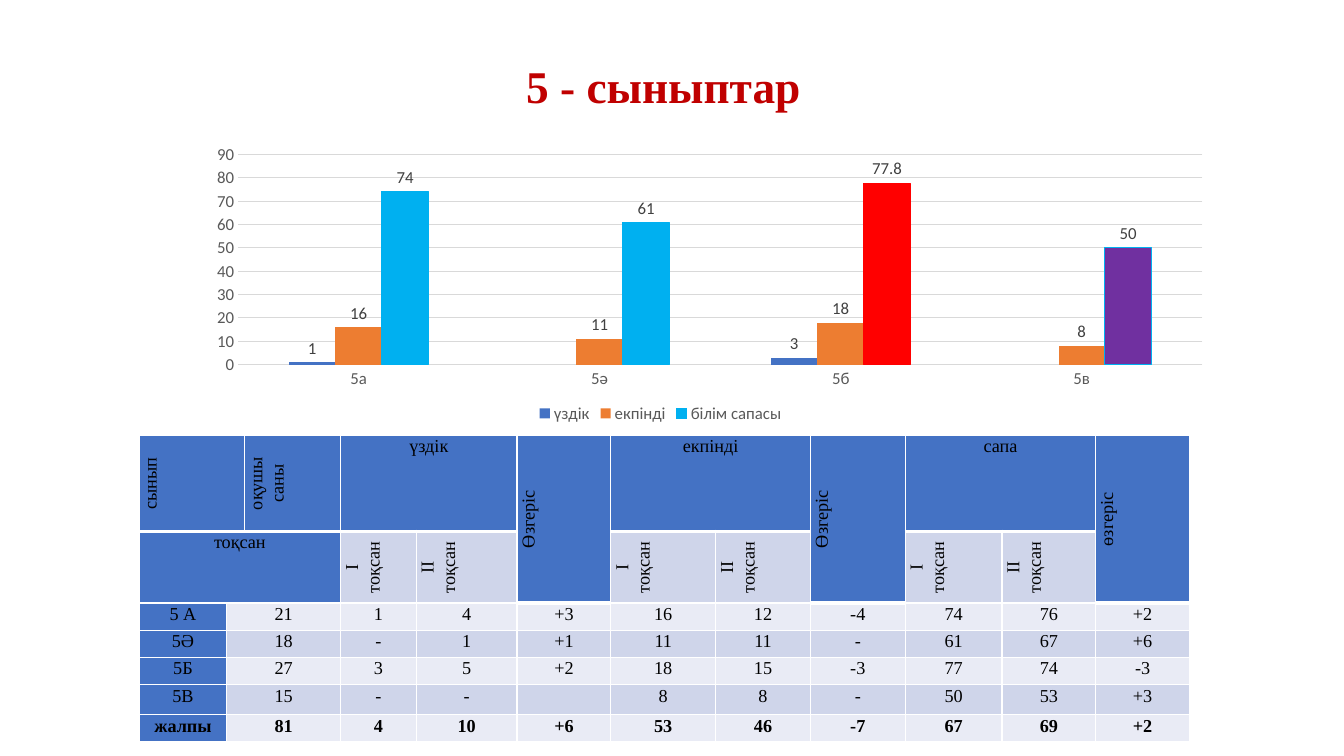
from lxml import etree
from pptx import Presentation
from pptx import util as u
from pptx.chart import data as chart_data
from pptx.dml.color import RGBColor
from pptx.enum import chart as ch, text
from pptx.oxml import parse_xml
from pptx.oxml import ns

PX = 9144  # 100 px to the inch
THEME = {
    "serif": "Times New Roman", "sans": "Calibri",
    "title_size": 32.4, "table_size": 13, "chart_size": 12,
    "title": "C00000", "ink": "000000", "white": "FFFFFF",
    "header": "4472C4", "band_light": "E9EBF5", "band_dark": "CFD5EA",
    "axis_text": "595959", "label_text": "404040", "grid": "D9D9D9",
    "excellent": "4472C4", "good": "ED7D31", "quality": "00B0F0",
    "best": "FF0000", "lowest": "7030A0",
}


def px(*lengths):
    return [u.Emu(length * PX) for length in lengths]


def set_font(font, face, size, color, bold=False):
    values = {"name": THEME[face], "size": u.Pt(THEME[size]), "bold": bold}
    for name, value in values.items():
        setattr(font, name, value)
    font.color.rgb = RGBColor.from_string(THEME[color])


deck = Presentation()
deck.slide_width, deck.slide_height = px(1333, 750)
page = deck.slides.add_slide(deck.slide_layouts[6])

# Title
box = page.shapes.add_textbox(*px(83, 23, 1150, 72))
frame_format = {"word_wrap": True, "vertical_anchor": text.MSO_ANCHOR.TOP,
                "margin_top": px(41)[0], "margin_bottom": 0}
for name, value in frame_format.items():
    setattr(box.text_frame, name, value)
para = box.text_frame.paragraphs[0]
para.alignment, para.line_spacing = text.PP_ALIGN.CENTER, 0.9
span = para.add_run()
span.text = "5 - сыныптар"
set_font(span.font, "serif", "title_size", "title", True)

# Table: None stands for a cell covered by a merge
TERMS = ["І тоқсан", "ІІ тоқсан", None]
ROWS = [
    ["сынып", None, "оқушы саны", "үздік", None, "Өзгеріс",
     "екпінді", None, "Өзгеріс", "сапа", None, "өзгеріс"],
    ["тоқсан", None, None] + TERMS * 3,
    ["5 А", "21", None, "1", "4", "+3", "16", "12", "-4", "74", "76", "+2"],
    ["5Ә", "18", None, "-", "1", "+1", "11", "11", "-", "61", "67", "+6"],
    ["5Б", "27", None, "3", "5", "+2", "18", "15", "-3", "77", "74", "-3"],
    ["5В", "15", None, "-", "-", "", "8", "8", "-", "50", "53", "+3"],
    ["жалпы", "81", None, "4", "10", "+6", "53", "46", "-7", "67", "69", "+2"],
]
WIDTHS = [87, 13, 95, 75, 100, 93, 104, 94, 94, 96, 93, 93]
HEIGHTS = [95, 71] + [27] * 5
CHANGE_COLUMNS = (5, 8, 11)
SIDEWAYS = {"сынып", "оқушы саны", "Өзгеріс", "өзгеріс", *TERMS[:2]}

table = page.shapes.add_table(
    len(ROWS), len(WIDTHS), *px(138, 432, sum(WIDTHS), sum(HEIGHTS))).table
for column, width in zip(table.columns, px(*WIDTHS)):
    column.width = width
for row, height in zip(table.rows, px(*HEIGHTS)):
    row.height = height

merges = [((0, 0), (0, 1)), ((1, 0), (1, 2))]
merges += [((0, c), (1, c)) for c in CHANGE_COLUMNS]
merges += [((0, c - 2), (0, c - 1)) for c in CHANGE_COLUMNS]
merges += [((r, 1), (r, 2)) for r in range(2, len(ROWS))]
for first, last in merges:
    table.cell(*first).merge(table.cell(*last))

cell_format = {"margin_left": px(7)[0], "margin_right": px(7)[0],
               "margin_top": 0, "margin_bottom": 0}
para_format = {"alignment": text.PP_ALIGN.CENTER, "line_spacing": 1.07,
               "space_after": u.Pt(8)}
for r, words in enumerate(ROWS):
    for c, word in enumerate(words):
        cell = table.cell(r, c)
        for name, value in cell_format.items():
            setattr(cell, name, value)
        properties = cell._tc.get_or_add_tcPr()

        # White borders, heavier below the header
        heavy = {(0, "B"), (1, "T")}
        if c in CHANGE_COLUMNS:
            heavy = {(0, "B"), (1, "B")}
        for side in "LRTB":
            weight = u.Pt(3 if (r, side) in heavy else 1)
            line = etree.SubElement(properties, ns.qn("a:ln" + side), w=str(weight))
            fill = etree.SubElement(line, ns.qn("a:solidFill"))
            etree.SubElement(fill, ns.qn("a:srgbClr"), val=THEME["white"])

        color = "band_dark" if r % 2 else "band_light"
        if r == 0 or c == 0 or (r == 1 and c in CHANGE_COLUMNS):
            color = "header"
        cell.fill.solid()
        cell.fill.fore_color.rgb = RGBColor.from_string(THEME[color])
        if word in SIDEWAYS:
            properties.set("vert", "vert270")

        para = cell.text_frame.paragraphs[0]
        for name, value in para_format.items():
            setattr(para, name, value)
        span = para.add_run()
        span.text = word or ""
        set_font(span.font, "serif", "table_size", "ink", r == len(ROWS) - 1)

# Chart
SERIES = [
    ("үздік", "excellent", [1, None, 3, None]),
    ("екпінді", "good", [16, 11, 18, 8]),
    ("білім сапасы", "quality", [74, 61, 77.8, 50]),
]
figures = chart_data.CategoryChartData()
figures.categories = ["5а", "5ә", "5б", "5в"]
for name, color, values in SERIES:
    figures.add_series(name, values)
chart = page.shapes.add_chart(
    ch.XL_CHART_TYPE.COLUMN_CLUSTERED, *px(118, 113, 1075, 311), figures).chart
set_font(chart.font, "sans", "chart_size", "axis_text")
chart.has_title = False
chart.has_legend = True
chart.legend.position = ch.XL_LEGEND_POSITION.BOTTOM
chart.legend.include_in_layout = False
set_font(chart.legend.font, "sans", "chart_size", "axis_text")

# Axes
for axis in (chart.category_axis, chart.value_axis):
    axis.major_tick_mark = axis.minor_tick_mark = ch.XL_TICK_MARK.NONE
    set_font(axis.tick_labels.font, "sans", "chart_size", "axis_text")
chart.value_axis.format.line.fill.background()
chart.value_axis.has_major_gridlines = True
for line in (chart.category_axis.format.line,
             chart.value_axis.major_gridlines.format.line):
    line.color.rgb = RGBColor.from_string(THEME["grid"])
    line.width = u.Pt(0.75)
scale = {"minimum_scale": 0, "maximum_scale": 90, "major_unit": 10}
for name, value in scale.items():
    setattr(chart.value_axis, name, value)

# Columns and their labels
plot = chart.plots[0]
plot.gap_width, plot.overlap, plot.vary_by_categories = 219, 0, False
for series, (name, color, values) in zip(plot.series, SERIES):
    series.format.fill.solid()
    series.format.fill.fore_color.rgb = RGBColor.from_string(THEME[color])
    labels = series.data_labels
    labels.show_value = True
    labels.position = ch.XL_LABEL_POSITION.OUTSIDE_END
    set_font(labels.font, "sans", "chart_size", "label_text")
quality = plot.series[2]
quality.format.line.color.rgb = RGBColor.from_string(THEME["quality"])
quality.format.line.width = u.Pt(0.75)
for index, color, outline in ((2, "best", "best"), (3, "lowest", "quality")):
    look = quality.points[index].format
    look.fill.solid()
    look.fill.fore_color.rgb = RGBColor.from_string(THEME[color])
    look.line.color.rgb = RGBColor.from_string(THEME[outline])
    look.line.width = u.Pt(0.75)

# Inner plot area, as shares of the chart
area = chart._chartSpace.chart.plotArea
for layout in area.findall(ns.qn("c:layout")):
    area.remove(layout)
places = {"layoutTarget": "inner", "xMode": "edge", "yMode": "edge",
          "x": 0.11, "y": 0.13, "w": 0.89, "h": 0.67}
parts = "".join(f'<c:{name} val="{value}"/>' for name, value in places.items())
area.insert(0, parse_xml(
    f'<c:layout {ns.nsdecls("c")}><c:manualLayout>{parts}</c:manualLayout></c:layout>'))

deck.save("out.pptx")
